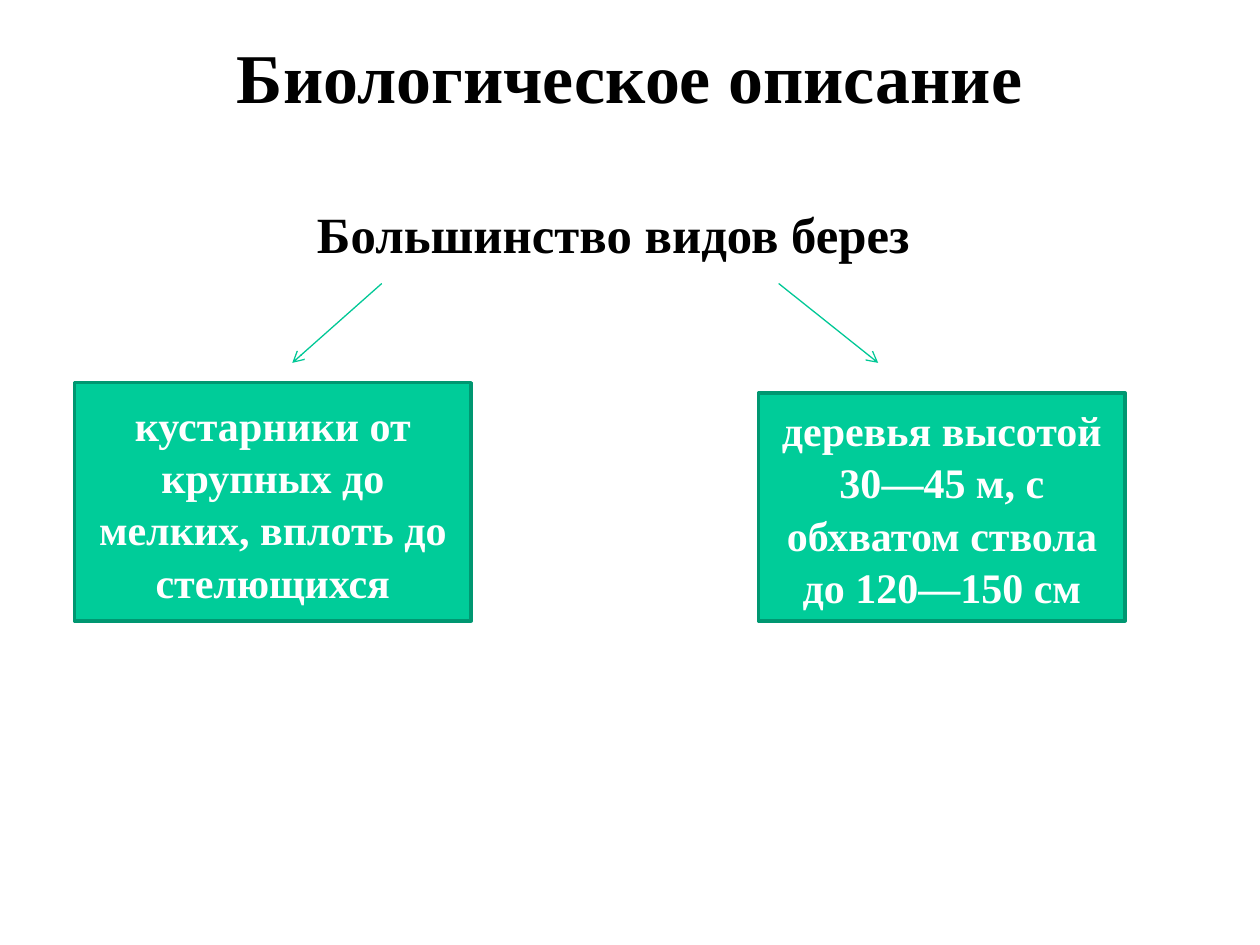
from dataclasses import dataclass

from lxml import etree
from pptx import Presentation
from pptx import util as u
from pptx.dml.color import RGBColor
from pptx.enum import shapes, text
from pptx.oxml.ns import qn


@dataclass(frozen=True)
class Theme:
    font: str = "Times New Roman"
    ink: RGBColor = RGBColor(0, 0, 0)
    light: RGBColor = RGBColor(0xFF, 0xFF, 0xFF)
    fill: RGBColor = RGBColor(0x00, 0xCC, 0x99)
    edge: RGBColor = RGBColor(0x00, 0x97, 0x71)
    arrow: RGBColor = RGBColor(0x00, 0xC8, 0x96)
    title_size: float = 39.9
    subtitle_size: float = 29
    card_size: float = 24


theme = Theme()
deck = Presentation()
deck.slide_width, deck.slide_height = u.Inches(10), u.Inches(7.5)
page = deck.slides.add_slide(deck.slide_layouts[6])


def place(x, y, *more):
    """Turn x, y pairs given in percent of the slide into lengths."""
    sides = (deck.slide_width, deck.slide_height)
    return [u.Emu(round(share * sides[i % 2] / 100)) for i, share in enumerate((x, y, *more))]


def write(shape, wording, size, color, anchor, spacing):
    frame = shape.text_frame
    frame.word_wrap = True
    frame.vertical_anchor = anchor
    frame.text = wording
    para = frame.paragraphs[0]
    para.alignment = text.PP_ALIGN.CENTER
    para.line_spacing = spacing
    font = para.runs[0].font
    font.name, font.size, font.bold = theme.font, u.Pt(size), True
    font.color.rgb = color


headings = [
    ("Биологическое описание", theme.title_size, (5, 4, 90, 16.7)),
    ("Большинство видов берез", theme.subtitle_size, (4.9, 21.6, 87.6, 44.1)),
]
for wording, size, area in headings:
    box = page.shapes.add_textbox(*place(*area))
    frame = box.text_frame
    frame.margin_left = frame.margin_right = frame.margin_bottom = 0
    frame.margin_top = u.Inches(0.03)
    write(box, wording, size, theme.ink, text.MSO_ANCHOR.TOP, 0.93)

for ends in [(30.3, 30, 23.2, 38.4), (61.8, 30, 69.7, 38.4)]:
    arrow = page.shapes.add_connector(shapes.MSO_CONNECTOR.STRAIGHT, *place(*ends))
    arrow.line.color.rgb = theme.arrow
    arrow.line.width = u.Pt(0.75)
    etree.SubElement(arrow.line._get_or_add_ln(), qn("a:tailEnd"), type="arrow")
    etree.SubElement(arrow._element.spPr, qn("a:effectLst"))

cards = [
    ("деревья высотой 30—45 м, с обхватом ствола до 120—150 см", (60.2, 41.6, 29.1, 24.1)),
    ("кустарники от крупных до мелких, вплоть до стелющихся", (5.9, 40.5, 31.5, 25.2)),
]
for wording, area in cards:
    card = page.shapes.add_shape(shapes.MSO_SHAPE.RECTANGLE, *place(*area))
    card.shadow.inherit = False
    card.fill.solid()
    card.fill.fore_color.rgb = theme.fill
    card.line.color.rgb = theme.edge
    card.line.width = u.Pt(2)
    write(card, wording, theme.card_size, theme.light, text.MSO_ANCHOR.MIDDLE, 1.04)

deck.save("out.pptx")
